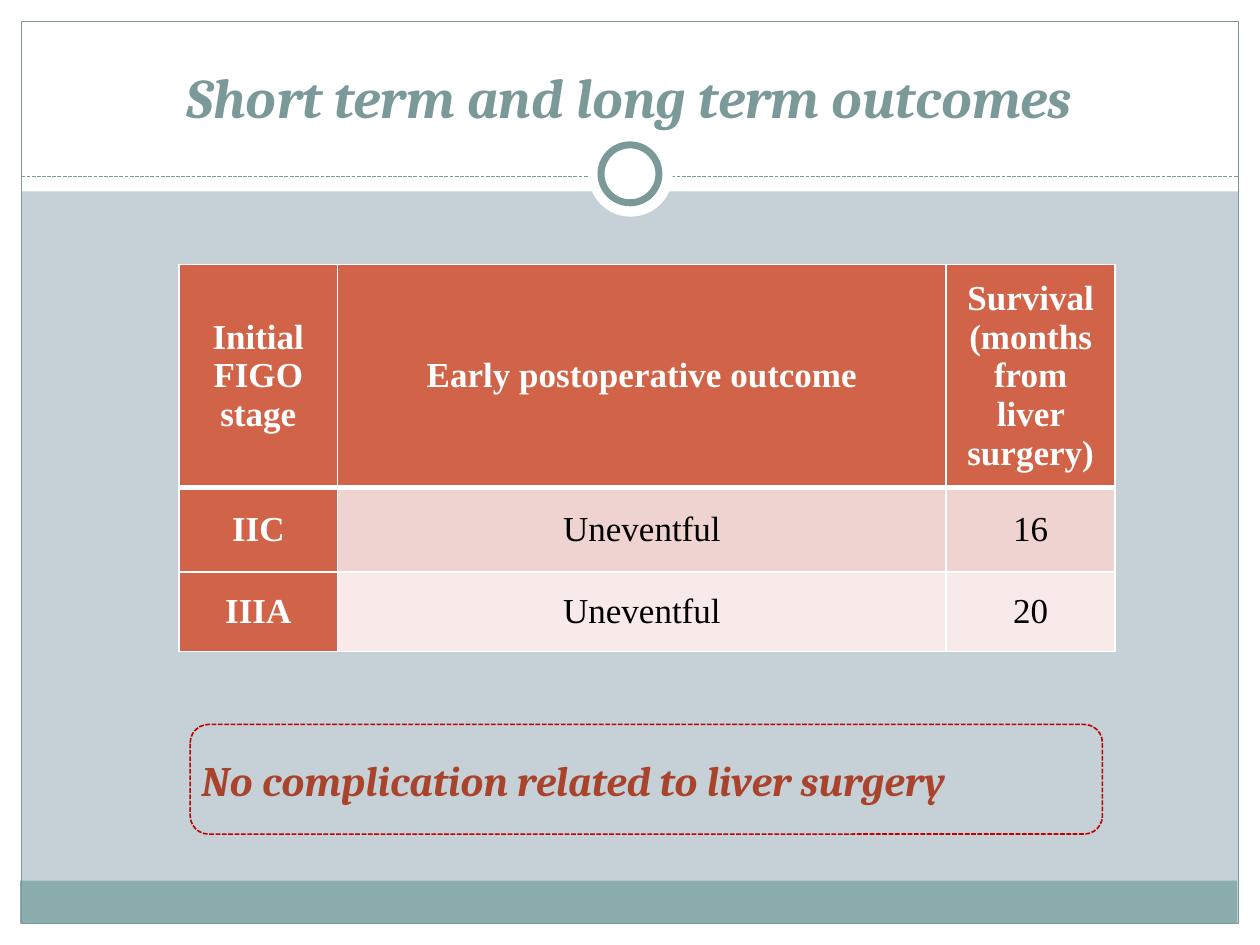
from lxml import etree
from pptx import Presentation
from pptx.dml.color import RGBColor
from pptx.enum import dml, shapes, text
from pptx.oxml.ns import qn
from pptx.util import Inches, Pt

WHITE, TEAL, RUST = "FFFFFF", "7C999A", "D16349"
HEADERS = ["Initial FIGO stage", "Early postoperative outcome",
           "Survival (months from liver surgery)"]
OUTCOMES = [["IIC", "Uneventful", "16"], ["IIIA", "Uneventful", "20"]]
BAND_FILLS = ["EED3D0", "F7EAE9"]
COLUMN_WIDTHS = [1.26, 4.83, 1.34]
ROW_HEIGHTS = [1.77, 0.67, 0.63]


def color(value):
    return RGBColor.from_string(value)


def set_line(line, value, width, dashed=False):
    line.color.rgb = color(value)
    line.width = Pt(width)
    if dashed:
        line.dash_style = dml.MSO_LINE.SQUARE_DOT


def add_shape(slide, kind, box, fill=None, line=None):
    """Add a preset shape; line holds the arguments of set_line."""
    shape = slide.shapes.add_shape(kind, *map(Inches, box))
    shape.shadow.inherit = False
    if fill:
        shape.fill.solid()
        shape.fill.fore_color.rgb = color(fill)
    else:
        shape.fill.background()
    if line:
        set_line(shape.line, *line)
    else:
        shape.line.fill.background()
    return shape


def add_dashed_rule(slide, left, right, top):
    rule = slide.shapes.add_connector(
        shapes.MSO_CONNECTOR.STRAIGHT, *map(Inches, (left, top, right, top)))
    set_line(rule.line, TEAL, 0.75, True)
    etree.SubElement(rule.element.spPr, qn("a:effectLst"))


def write(text_frame, content, font_name, size, value, bold=True, italic=False,
          align=text.PP_ALIGN.LEFT):
    text_frame.text = content
    paragraph = text_frame.paragraphs[0]
    paragraph.alignment = align
    font = paragraph.runs[0].font
    font.name, font.size = font_name, Pt(size)
    font.bold, font.italic = bold, italic
    font.color.rgb = color(value)


def add_frame(slide):
    """Draw the white margins, footer band, outline and header ring."""
    rectangle, ellipse = shapes.MSO_SHAPE.RECTANGLE, shapes.MSO_SHAPE.OVAL
    for box in [(0, 7.33, 10, 0.17), (0, 0, 10, 1.52),
                (0, 0, 0.17, 7.5), (9.83, 0, 0.17, 7.5)]:
        add_shape(slide, rectangle, box, WHITE)
    add_shape(slide, rectangle, (0.16, 6.99, 9.66, 0.34), "8CADAE")
    add_shape(slide, rectangle, (0.17, 0.17, 9.66, 7.16), line=(TEAL, 0.75))
    add_dashed_rule(slide, 0.17, 9.83, 1.4)
    add_shape(slide, ellipse, (4.67, 1.05, 0.67, 0.67), WHITE)
    add_shape(slide, ellipse, (4.77, 1.15, 0.46, 0.46), WHITE, (TEAL, 4))


def add_title(slide, content):
    title = slide.shapes.title
    title.left, title.top, title.width, title.height = map(
        Inches, (0.33, 0.25, 9.33, 0.83))
    title.text_frame.vertical_anchor = text.MSO_ANCHOR.BOTTOM
    write(title.text_frame, content, "Cambria", 32, TEAL, italic=True,
          align=text.PP_ALIGN.CENTER)
    # Bring the title in front of the white header band.
    slide.shapes.element.append(title.element)


def add_note(slide, content):
    note = slide.shapes.add_textbox(*map(Inches, (1.5, 5.94, 7.64, 0.5)))
    note.text_frame.word_wrap = True
    write(note.text_frame, content, "Cambria", 24, "A9432B", italic=True)
    add_shape(slide, shapes.MSO_SHAPE.ROUNDED_RECTANGLE,
              (1.51, 5.75, 7.24, 0.87), line=("C00000", 0.9, True))


def set_borders(cell, widths):
    properties = cell._tc.get_or_add_tcPr()
    for side, width in widths.items():
        line = etree.SubElement(properties, qn(f"a:ln{side}"), w=str(Pt(width)))
        fill = etree.SubElement(line, qn("a:solidFill"))
        etree.SubElement(fill, qn("a:srgbClr"), val=WHITE)


def format_cell(cell, content, row, column):
    is_header = row == 0 or column == 0
    set_borders(cell, {"L": 1, "R": 1, "T": 3 if row == 1 else 1,
                       "B": 3 if row == 0 else 1})
    cell.fill.solid()
    cell.fill.fore_color.rgb = color(RUST if is_header else BAND_FILLS[row - 1])
    cell.vertical_anchor = text.MSO_ANCHOR.MIDDLE
    write(cell.text_frame, content, "Times New Roman", 20,
          WHITE if is_header else "000000", bold=is_header,
          align=text.PP_ALIGN.CENTER)


def add_outcome_table(slide):
    rows = [HEADERS, *OUTCOMES]
    box = (1.42, 2.1, sum(COLUMN_WIDTHS), sum(ROW_HEIGHTS))
    table = slide.shapes.add_table(
        len(rows), len(HEADERS), *map(Inches, box)).table
    table.first_col = True
    for column, width in zip(table.columns, COLUMN_WIDTHS):
        column.width = Inches(width)
    for row, height in zip(table.rows, ROW_HEIGHTS):
        row.height = Inches(height)
    for row, contents in enumerate(rows):
        for column, content in enumerate(contents):
            format_cell(table.cell(row, column), content, row, column)


def main():
    presentation = Presentation()
    presentation.slide_width = Inches(10)
    presentation.slide_height = Inches(7.5)
    slide = presentation.slides.add_slide(presentation.slide_layouts[5])
    slide.background.fill.solid()
    slide.background.fill.fore_color.rgb = color("C5D1D7")
    add_frame(slide)
    add_title(slide, "Short term and long term outcomes")
    add_note(slide, "No complication related to liver surgery")
    add_outcome_table(slide)
    presentation.save("out.pptx")


if __name__ == "__main__":
    main()
